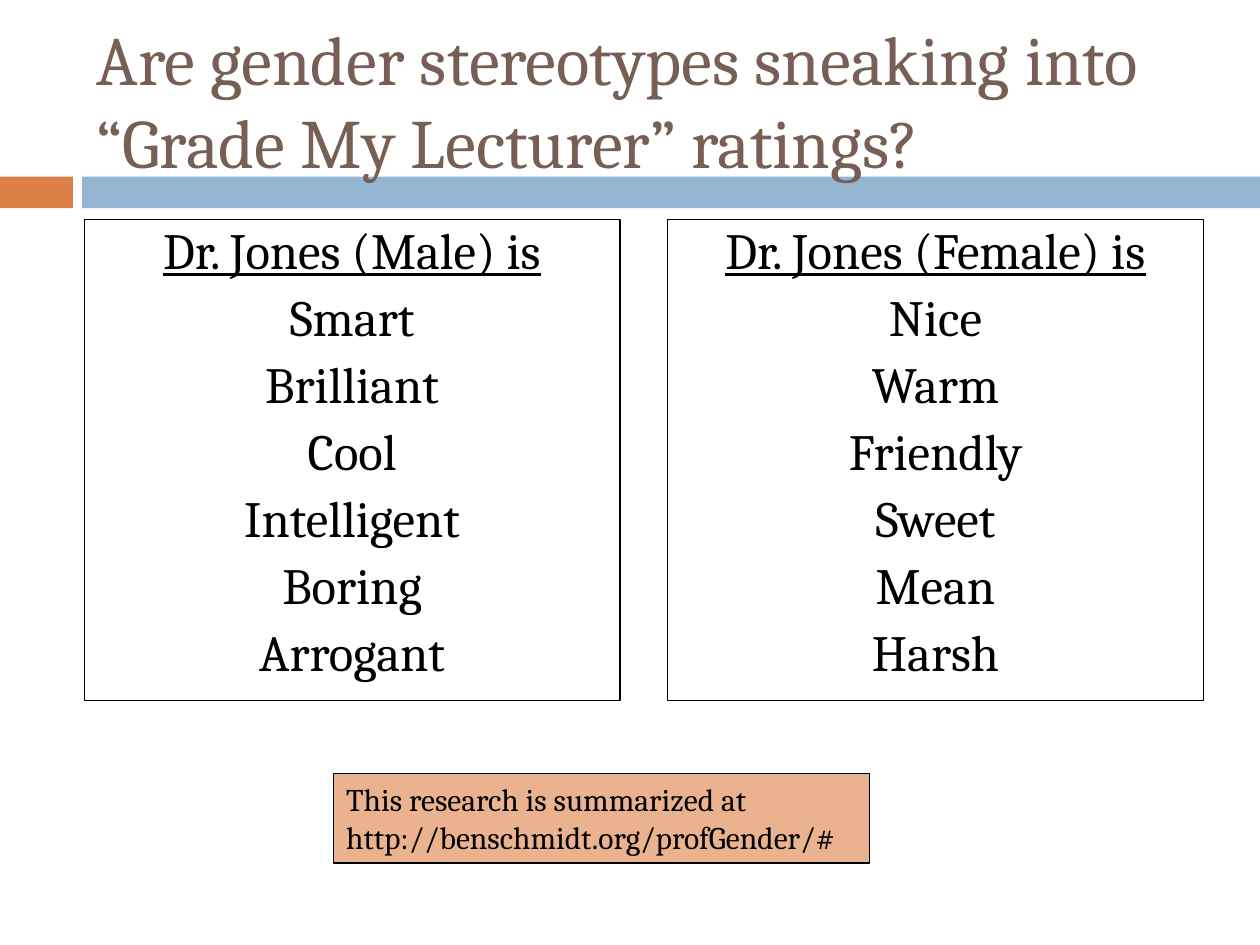
from pptx import Presentation
from pptx.dml.color import RGBColor
from pptx.enum.shapes import MSO_SHAPE
from pptx.enum.text import MSO_ANCHOR, MSO_AUTO_SIZE, PP_ALIGN
from pptx.util import Cm, Pt

FONT = "Cambria"
BLACK = "000000"
PANELS = [
    (1.7, "Dr. Jones (Male) is",
     ["Smart", "Brilliant", "Cool", "Intelligent", "Boring", "Arrogant"]),
    (13.46, "Dr. Jones (Female) is",
     ["Nice", "Warm", "Friendly", "Sweet", "Mean", "Harsh"]),
]


def color(value):
    """Turn a hex string into a colour."""
    return RGBColor.from_string(value)


def add_box(page, left, top, width, height, fill=None, line=None):
    """Add a flat rectangle measured in centimetres."""
    box = page.shapes.add_shape(
        MSO_SHAPE.RECTANGLE, Cm(left), Cm(top), Cm(width), Cm(height))
    box.shadow.inherit = False
    if fill:
        box.fill.solid()
        box.fill.fore_color.rgb = color(fill)
    else:
        box.fill.background()
    if line:
        box.line.color.rgb = color(line)
        box.line.width = Pt(0.75)
    else:
        box.line.fill.background()
    frame = box.text_frame
    frame.word_wrap = True
    frame.vertical_anchor = MSO_ANCHOR.TOP
    return box


def add_text(frame, text, size, ink=BLACK, align=PP_ALIGN.LEFT,
             underline=False, spacing=None, before=None):
    """Write one paragraph, reusing the empty first one."""
    para = frame.paragraphs[0]
    if para.runs:
        para = frame.add_paragraph()
    para.alignment = align
    if spacing is not None:
        para.line_spacing = spacing
    if before is not None:
        para.space_before = Pt(before)
    span = para.add_run()
    span.text = text
    span.font.name = FONT
    span.font.size = Pt(size)
    span.font.underline = underline
    span.font.color.rgb = color(ink)


def add_band(page, left, top, width, height):
    """Draw the orange tab and the blue bar beside it."""
    tab, gap = 1.47, 0.18
    add_box(page, left, top, tab, height, fill="DD8047")
    add_box(page, left + tab + gap, top, width - tab - gap, height, fill="94B6D2")


def add_title(page, left, top, width, height, text):
    """Place the slide title, centred vertically in its box."""
    box = page.shapes.add_textbox(Cm(left), Cm(top), Cm(width), Cm(height))
    frame = box.text_frame
    frame.word_wrap = True
    frame.vertical_anchor = MSO_ANCHOR.MIDDLE
    add_text(frame, text, 39.6, ink="775F55")


def add_panel(page, left, top, width, height, heading, words):
    """Draw an outlined list under an underlined heading."""
    frame = add_box(page, left, top, width, height, line=BLACK).text_frame
    add_text(frame, heading, 29, align=PP_ALIGN.CENTER, underline=True, spacing=0.9)
    for word in words:
        add_text(frame, word, 29, align=PP_ALIGN.CENTER, spacing=0.9, before=7)


def add_note(page, left, top, width, height, text):
    """Draw the filled source note."""
    frame = add_box(page, left, top, width, height, fill="EAB28F", line=BLACK).text_frame
    frame.auto_size = MSO_AUTO_SIZE.SHAPE_TO_FIT_TEXT
    add_text(frame, text, 18)


def main():
    """Build and save the slide."""
    deck = Presentation()
    deck.slide_width, deck.slide_height = Cm(25.4), Cm(19.05)
    page = deck.slides.add_slide(deck.slide_layouts[6])
    add_band(page, 0, 3.56, 25.4, 0.64)
    add_title(page, 1.7, 0.64, 22.66, 2.74,
              "Are gender stereotypes sneaking into “Grade My Lecturer” ratings?")
    for left, heading, words in PANELS:
        add_panel(page, left, 4.42, 10.8, 9.7, heading, words)
    add_note(page, 6.73, 15.6, 10.8, 1.8,
             "This research is summarized at http://benschmidt.org/profGender/#")
    deck.save("out.pptx")


if __name__ == "__main__":
    main()
